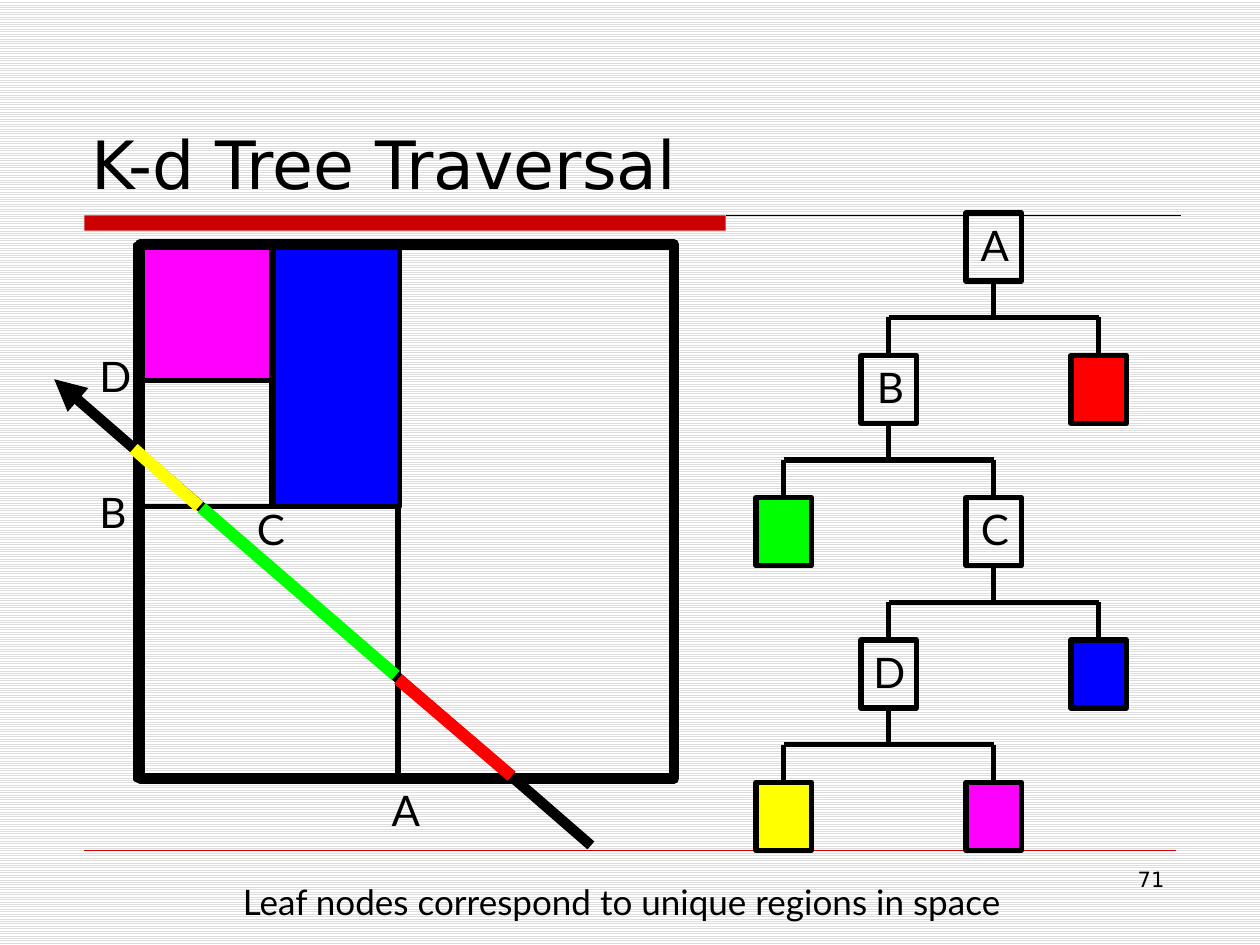
"""Build the k-d tree traversal slide: divided space, ray and tree."""
from dataclasses import dataclass
from typing import NamedTuple, Optional

from lxml import etree
from pptx import Presentation
from pptx.dml.color import RGBColor
from pptx.enum.dml import MSO_PATTERN
from pptx.enum.shapes import MSO_CONNECTOR, MSO_SHAPE
from pptx.enum.text import MSO_ANCHOR, PP_ALIGN
from pptx.oxml.ns import qn
from pptx.util import Inches, Pt

RECT = MSO_SHAPE.RECTANGLE
STRAIGHT = MSO_CONNECTOR.STRAIGHT
STRIPES = MSO_PATTERN.LIGHT_HORIZONTAL
TOP, BOTTOM = MSO_ANCHOR.TOP, MSO_ANCHOR.BOTTOM
LEFT, RIGHT = PP_ALIGN.LEFT, PP_ALIGN.RIGHT
SIDE_TOP, SIDE_BOTTOM = 0, 2


@dataclass(frozen=True)
class Theme:
    """Colours, fonts and sizes of the slide."""
    black: str = "000000"
    white: str = "FFFFFF"
    stripe: str = "DDDDDD"
    accent: str = "CC0000"
    magenta: str = "FF00FF"
    blue: str = "0000FF"
    green: str = "00FF00"
    yellow: str = "FFFF00"
    red: str = "FF0000"
    leaf_red: str = "FE0000"
    title_font: str = "DejaVu Sans"
    body_font: str = "Lato"
    title: int = 38
    label: int = 24
    caption: int = 20
    number: int = 12
    thin: int = 3
    thick: int = 6
    ray: int = 7


T = Theme()


class Box(NamedTuple):
    """Position and size in inches."""
    x: float
    y: float
    w: float
    h: float


class Region(NamedTuple):
    """Cell of the divided space."""
    box: Box
    fill: Optional[str] = None
    width: int = T.thin


class Segment(NamedTuple):
    """Stretch of the ray."""
    start: tuple[float, float]
    end: tuple[float, float]
    color: str
    width: int = T.ray
    arrow: bool = False


@dataclass(frozen=True)
class Node:
    """Tree node with its column and up to two children."""
    column: int
    label: str = ""
    fill: Optional[str] = None
    children: tuple["Node", ...] = ()


REGIONS = [
    Region(Box(1.08, 1.94, 1.08, 1.08), T.magenta),
    Region(Box(2.17, 1.94, 1, 2.08), T.blue),
    Region(Box(1.08, 3.02, 1.08, 1)),
    Region(Box(1.08, 4.02, 2.08, 2.17)),
    Region(Box(1.11, 1.94, 4.24, 4.24), width=T.thick),
]
PLANES = {"A": (3.01, 6.18), "B": (0.69, 3.81), "C": (1.94, 3.95), "D": (0.69, 2.73)}
RAY = [
    Segment((4.69, 6.71), (0.43, 3.01), T.black, T.thick, True),
    Segment((3.16, 5.39), (4.06, 6.16), T.red),
    Segment((1.6, 4.03), (3.14, 5.36), T.green),
    Segment((1.06, 3.56), (1.58, 4.02), T.yellow),
]
NODE_D = Node(1, "D", children=(Node(0, fill=T.yellow), Node(2, fill=T.magenta)))
NODE_C = Node(2, "C", children=(NODE_D, Node(3, fill=T.blue)))
NODE_B = Node(1, "B", children=(Node(0, fill=T.green), NODE_C))
ROOT = Node(2, "A", children=(NODE_B, Node(3, fill=T.leaf_red)))
TREE_X, TREE_Y = 6, 1.69
COLUMN, ROW = 2.5 / 3, 1.13
NODE_W, NODE_H, BAR_DROP = 0.44, 0.54, 0.83


def rgb(color: str) -> RGBColor:
    """Turn a hex string into a colour."""
    return RGBColor.from_string(color)


def write(sp, text: str, *, size: int, font: str = T.body_font, align=LEFT,
          anchor=TOP, wrap: bool = True) -> None:
    """Set the only paragraph of a shape with its format."""
    tf = sp.text_frame
    tf.word_wrap, tf.vertical_anchor = wrap, anchor
    p = tf.paragraphs[0]
    p.alignment = align
    r = p.add_run()
    r.text = text
    r.font.size, r.font.name = Pt(size), font
    r.font.color.rgb = rgb(T.black)


def add_text(s, box: Box, text: str, **style) -> None:
    """Add a formatted text box."""
    write(s.shapes.add_textbox(*map(Inches, box)), text, **style)


def add_rect(s, box: Box, fill: Optional[str] = None, width: float = T.thin):
    """Add a rectangle, outlined in black unless the width is zero."""
    sp = s.shapes.add_shape(RECT, *map(Inches, box))
    sp.shadow.inherit = False
    if fill:
        sp.fill.solid()
        sp.fill.fore_color.rgb = rgb(fill)
    else:
        sp.fill.background()
    if width:
        sp.line.color.rgb = rgb(T.black)
        sp.line.width = Pt(width)
    else:
        sp.line.fill.background()
    return sp


def add_line(s, start: tuple[float, float], end: tuple[float, float],
             color: str = T.black, width: float = T.thin, arrow: bool = False):
    """Add a straight connector without shadow."""
    cx = s.shapes.add_connector(STRAIGHT, *map(Inches, (*start, *end)))
    cx.line.color.rgb = rgb(color)
    cx.line.width = Pt(width)
    sp_pr = cx._element.spPr
    if arrow:
        etree.SubElement(sp_pr.find(qn("a:ln")), qn("a:tailEnd"), type="triangle")
    etree.SubElement(sp_pr, qn("a:effectLst"))
    return cx


def add_node(s, node: Node, level: int = 0):
    """Add a node and its subtree, and return the node's rectangle."""
    x, y = TREE_X + node.column * COLUMN, TREE_Y + level * ROW
    sp = add_rect(s, Box(x, y, NODE_W, NODE_H), node.fill)
    if node.label:
        write(sp, node.label, size=T.label, align=RIGHT)
    if node.children:
        middle, bar = x + NODE_W / 2, y + BAR_DROP
        add_line(s, (middle - COLUMN, bar), (middle + COLUMN, bar))
        stem = add_line(s, (middle, y + NODE_H), (middle, bar))
        stem.begin_connect(sp, SIDE_BOTTOM)
    for child in node.children:
        child_x = TREE_X + child.column * COLUMN + NODE_W / 2
        child_sp = add_node(s, child, level + 1)
        drop = add_line(s, (child_x, bar), (child_x, y + ROW))
        drop.end_connect(child_sp, SIDE_TOP)
    return sp


def main() -> None:
    """Build and save the slide."""
    prs = Presentation()
    prs.slide_width, prs.slide_height = Inches(10), Inches(7.5)
    s = prs.slides.add_slide(prs.slide_layouts[5])
    fill = s.background.fill
    fill.patterned()
    fill.pattern = STRIPES
    fill.fore_color.rgb, fill.back_color.rgb = rgb(T.stripe), rgb(T.white)

    title = s.shapes.title
    title.left, title.top, title.width, title.height = map(Inches, (0.63, 0.33, 8.75, 1.33))
    write(title, "K-d Tree Traversal", size=T.title, font=T.title_font, anchor=BOTTOM)
    add_rect(s, Box(0.67, 1.71, 5.09, 0.12), T.accent, 0)
    add_line(s, (5.76, 1.71), (9.37, 1.71), width=0.75)
    add_line(s, (0.67, 6.75), (9.33, 6.75), T.accent, 0.25)

    for region in REGIONS:
        add_rect(s, *region)
    for name, (x, y) in PLANES.items():
        add_text(s, Box(x, y, 0.4, 0.5), name, size=T.label, align=RIGHT, wrap=False)
    add_node(s, ROOT)
    add_text(s, Box(1.83, 6.94, 6.34, 0.43),
             "Leaf nodes correspond to unique regions in space", size=T.caption, wrap=False)
    for segment in RAY:
        add_line(s, *segment)
    add_text(s, Box(7.17, 6.83, 2.17, 0.52), "71", size=T.number,
             font=T.title_font, align=RIGHT)
    prs.save("out.pptx")


if __name__ == "__main__":
    main()
